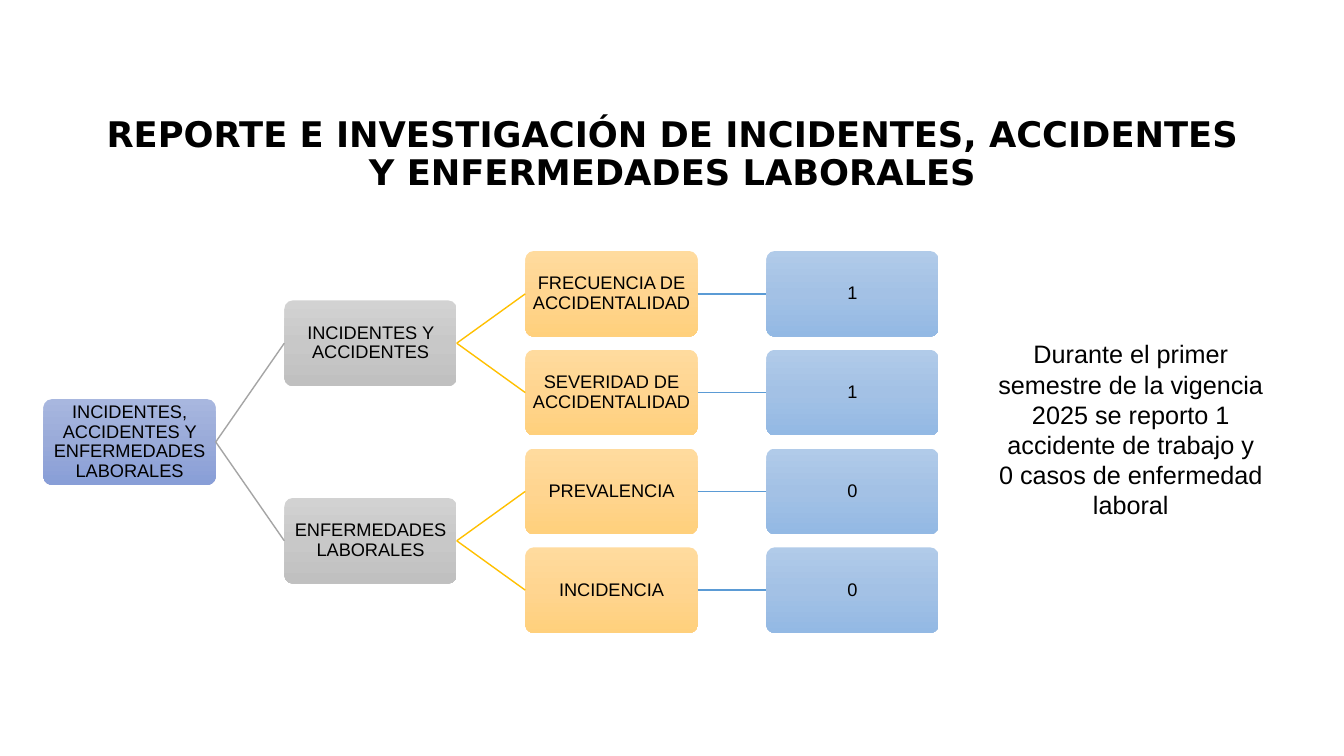
from copy import deepcopy

from pptx import Presentation
from pptx.dml.color import RGBColor as Rgb
from pptx.enum.shapes import MSO_CONNECTOR as Link, MSO_SHAPE as Form
from pptx.enum.text import MSO_ANCHOR as Anchor, MSO_AUTO_SIZE as Fit, PP_ALIGN as Align
from pptx.oxml.ns import qn
from pptx.oxml.xmlchemy import OxmlElement as Node
from pptx.util import Inches, Pt

LEVELS = [
    ("", ("A8B7DF", "9AABD9", "889ED7")),
    ("A5A5A5", ("D2D2D2", "C8C8C8", "C0C0C0")),
    ("FFC000", ("FFDB9E", "FFD590", "FFD07C")),
    ("5B9BD5", ("B1CBE9", "A3C1E5", "93B9E4")),
]
TREE = ("INCIDENTES, ACCIDENTES Y ENFERMEDADES LABORALES", [
    ("INCIDENTES Y ACCIDENTES", [
        ("FRECUENCIA DE ACCIDENTALIDAD", [("1", [])]),
        ("SEVERIDAD DE ACCIDENTALIDAD", [("1", [])]),
    ]),
    ("ENFERMEDADES LABORALES", [
        ("PREVALENCIA", [("0", [])]),
        ("INCIDENCIA", [("0", [])]),
    ]),
])


def color(code):
    return Rgb.from_string(code)


def write(frame, text, size=13, font="Arial", bold=False, ink="000000",
          space=None, anchor=Anchor.TOP, fit=Fit.NONE, inset=None):
    frame.word_wrap = True
    frame.auto_size = fit
    frame.vertical_anchor = anchor
    if inset is not None:
        frame.margin_left = frame.margin_right = Inches(inset)
        frame.margin_top = frame.margin_bottom = Inches(inset)
    para = frame.paragraphs[0]
    para.alignment = Align.CENTER
    para.line_spacing = space
    run = para.add_run()
    run.text = text
    run.font.size, run.font.name, run.font.bold = Pt(size), font, bold
    run.font.color.rgb = color(ink)


class Deck:
    """Hold the grid of the tree and the current slide."""

    left, top = 0.43, 2.49
    col, row = 2.39, 0.98
    wide, high = 1.71, 0.85

    def __init__(self):
        self.show = Presentation()
        self.show.slide_width, self.show.slide_height = Inches(13.33), Inches(7.5)
        self.slide = self.show.slides.add_slide(self.show.slide_layouts[5])

    def share(self, x, y, w, h):
        across, down = self.show.slide_width / 100, self.show.slide_height / 100
        return int(x * across), int(y * down), int(w * across), int(h * down)

    def title(self, text, *area, **style):
        head = self.slide.shapes.title
        head.left, head.top, head.width, head.height = self.share(*area)
        write(head.text_frame, text, **style)

    def note(self, text, *area, **style):
        box = self.slide.shapes.add_textbox(*self.share(*area))
        write(box.text_frame, text, **style)

    def card(self, text, col, row, shades):
        x, y = self.left + col * self.col, self.top + row * self.row
        box = self.slide.shapes.add_shape(
            Form.ROUNDED_RECTANGLE, Inches(x), Inches(y), Inches(self.wide), Inches(self.high))
        box.adjustments[0] = 0.1
        box.shadow.inherit = False
        box.line.fill.background()
        box.fill.gradient()
        box.fill.gradient_angle = 270
        stops = box._element.spPr.find(".//" + qn("a:gsLst"))
        stops.insert(1, deepcopy(stops[0]))
        for stop, place, shade in zip(box.fill.gradient_stops, (0, 0.5, 1), shades):
            stop.position = place
            stop.color.rgb = color(shade)
        write(box.text_frame, text, space=0.9, anchor=Anchor.MIDDLE, inset=0.01)
        return box

    def link(self, start, end, ink):
        line = self.slide.shapes.add_connector(Link.STRAIGHT, 0, 0, 0, 0)
        line.begin_connect(start, 3)
        line.end_connect(end, 1)
        line.line.color.rgb = color(ink)
        line.line.width = Pt(1)
        line._element.spPr.append(Node("a:effectLst"))

    def tree(self, node, rows, level=0):
        text, kids = node
        ink, shades = LEVELS[level]
        parts = [self.tree(kid, rows, level + 1) for kid in kids]
        spots = [spot for _, spot in parts] or [next(rows)]
        row = (spots[0] + spots[-1]) / 2
        box = self.card(text, level, row, shades)
        for part, _ in parts:
            self.link(box, part, LEVELS[level + 1][0])
        return box, row


def main():
    deck = Deck()
    deck.tree(TREE, iter(range(4)))
    deck.title("REPORTE E INVESTIGACIÓN DE INCIDENTES, ACCIDENTES Y ENFERMEDADES LABORALES",
               6.9, 18.93, 86.27, 7.33, size=25.2, font="DejaVu Sans", bold=True,
               space=0.9, anchor=Anchor.BOTTOM)
    deck.note("Durante el primer semestre de la vigencia 2025 se reporto 1 accidente de "
              "trabajo y 0 casos de enfermedad laboral",
              73.52, 44.13, 21.23, 25.6, size=18, fit=Fit.SHAPE_TO_FIT_TEXT)
    deck.show.save("out.pptx")


if __name__ == "__main__":
    main()
